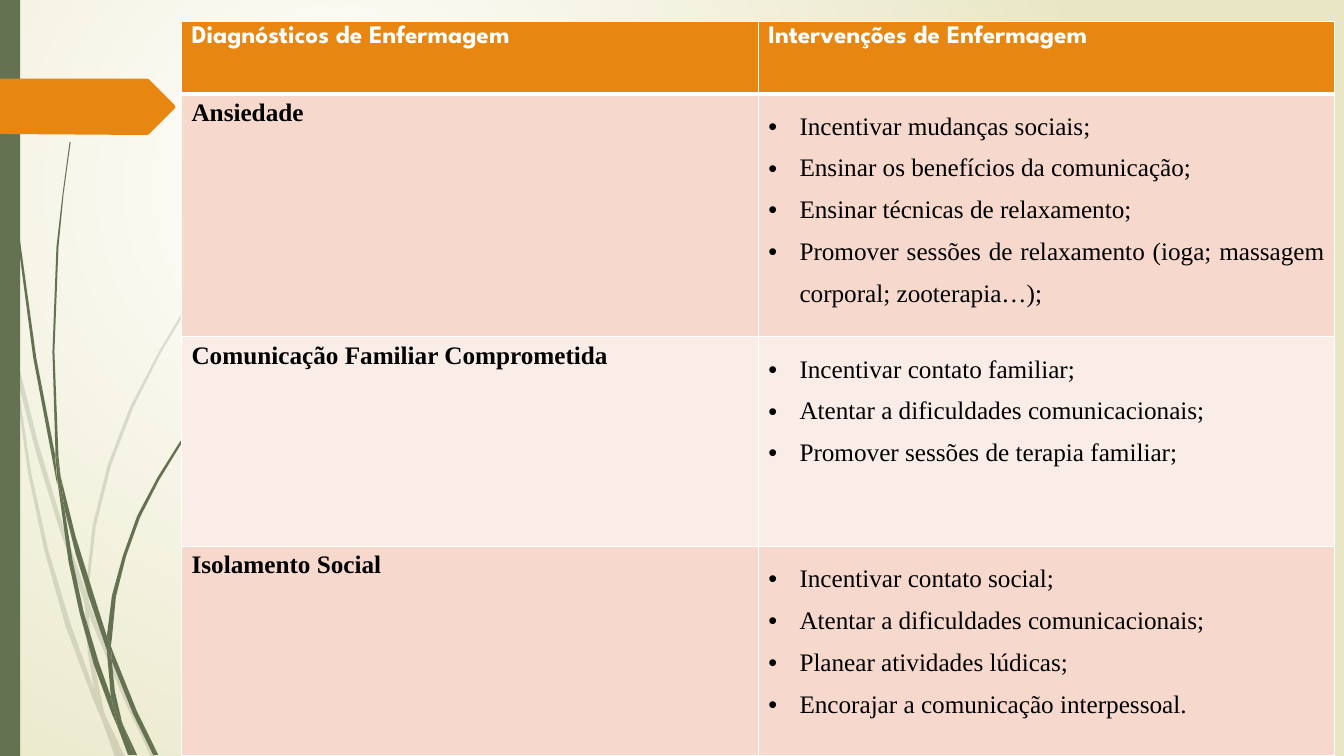
from lxml import etree
from pptx import Presentation
from pptx.dml.color import RGBColor
from pptx.enum.shapes import MSO_SHAPE as Shape
from pptx.enum.text import PP_ALIGN as Align
from pptx.oxml import parse_xml
from pptx.oxml.ns import nsdecls, qn
from pptx.util import Pt

PX = 9144  # 100 px to the inch

GREEN = RGBColor(0x64, 0x72, 0x52)
ORANGE = RGBColor(0xE7, 0x87, 0x12)
WHITE = RGBColor(0xFF, 0xFF, 0xFF)
BLACK = RGBColor(0x00, 0x00, 0x00)
CREAM = RGBColor(0xE8, 0xE6, 0xC4)
ROSE = RGBColor(0xF6, 0xD9, 0xCC)
PALE_ROSE = RGBColor(0xFA, 0xED, 0xE7)

# Outlines of the grass blades, in px
PALE_GRASS = [
    [(11, 350), (9, 322), (0, 282), (0, 299), (10, 344)],
    [(58, 522), (84, 599), (85, 586), (62, 520), (38, 440), (14, 345), (17, 376), (36, 450)],
    [(92, 607), (88, 596), (88, 610), (123, 694), (150, 751), (155, 751), (127, 692)],
    [(119, 751), (124, 751), (105, 711)],
    [(93, 683), (70, 619), (48, 546), (31, 469), (17, 376), (11, 350), (28, 470),
     (44, 546), (65, 621), (92, 693), (101, 714), (99, 707)],
    [(84, 599), (87, 646), (93, 683), (96, 692), (105, 711), (103, 706), (91, 646),
     (88, 610), (88, 608)],
    [(88, 584), (95, 522), (110, 462), (132, 405), (160, 349), (192, 296), (229, 245),
     (268, 198), (290, 175), (312, 154), (312, 153), (289, 175), (268, 197), (228, 244),
     (190, 295), (158, 348), (129, 404), (107, 461), (92, 521), (85, 584), (85, 586), (88, 596)],
    [(101, 714), (114, 751), (119, 751)],
    [(88, 608), (88, 610), (88, 596), (85, 586), (84, 599)],
    [(96, 692), (93, 683), (99, 707), (101, 714), (119, 751), (105, 711)],
]
DARK_GRASS = [
    [(7, 110), (17, 233), (33, 355), (56, 477), (57, 481), (55, 457), (55, 453), (36, 355),
     (19, 232), (8, 109), (5, 48), (4, 0), (3, 0), (4, 48)],
    [(88, 592), (106, 645), (106, 633), (106, 631), (93, 590), (75, 532), (60, 472),
     (64, 505), (75, 549)],
    [(113, 649), (110, 641), (111, 656), (132, 708), (152, 749), (157, 749), (136, 706)],
    [(110, 691), (98, 657), (83, 607), (72, 556), (64, 505), (57, 477), (68, 557), (79, 608),
     (93, 659), (111, 708), (117, 722), (116, 717)],
    [(60, 472), (58, 453), (54, 349), (58, 245), (63, 193), (70, 141), (69, 141), (62, 193),
     (56, 245), (52, 349), (55, 449)],
    [(133, 749), (136, 749), (122, 719)],
    [(57, 477), (64, 505), (60, 472), (55, 449), (55, 453)],
    [(111, 633), (115, 592), (125, 552), (139, 513), (158, 476), (180, 440), (205, 406),
     (231, 374), (245, 359), (261, 344), (260, 344), (245, 358), (231, 373), (204, 405),
     (178, 439), (156, 474), (136, 512), (122, 551), (111, 591), (106, 631), (110, 641)],
    [(117, 722), (127, 749), (131, 749)],
    [(106, 645), (110, 691), (116, 706), (122, 719), (121, 716), (114, 686), (111, 656), (109, 651)],
    [(106, 645), (109, 651), (111, 656), (110, 641), (106, 631), (106, 633)],
    [(116, 706), (110, 691), (116, 717), (117, 722), (130, 749), (133, 749), (122, 719)],
]
TAG = [(0, 78), (146, 78), (148, 79), (173, 104), (174, 106), (173, 108), (148, 133),
       (146, 134), (0, 133)]

HEADINGS = ["Diagnósticos de Enfermagem", "Intervenções de Enfermagem"]
CARE_PLAN = [
    ("Ansiedade", [
        "Incentivar mudanças sociais;",
        "Ensinar os benefícios da comunicação;",
        "Ensinar técnicas de relaxamento;",
        "Promover sessões de relaxamento (ioga; massagem corporal; zooterapia…);"]),
    ("Comunicação Familiar Comprometida", [
        "Incentivar contato familiar;",
        "Atentar a dificuldades comunicacionais;",
        "Promover sessões de terapia familiar;"]),
    ("Isolamento Social", [
        "Incentivar contato social;",
        "Atentar a dificuldades comunicacionais;",
        "Planear atividades lúdicas;",
        "Encorajar a comunicação interpessoal."]),
]
ROW_HEIGHTS = [72, 241, 208, 208]
COLUMN_WIDTH = 572


def paint_background(slide):
    fill = slide.background.fill
    fill.gradient()
    for stop, color in zip(fill.gradient_stops, (WHITE, CREAM)):
        stop.color.rgb = color
    linear = slide.element.find(".//" + qn("a:lin"))
    linear.getparent().replace(linear, parse_xml(
        f'<a:path {nsdecls("a")} path="circle">'
        '<a:fillToRect l="50000" t="50000" r="100000" b="100000"/></a:path>'))


def paint(shape, color, opacity=100):
    shape.shadow.inherit = False
    shape.fill.solid()
    shape.fill.fore_color.rgb = color
    shape.line.fill.background()
    if opacity < 100:
        rgb = shape.element.spPr.find(qn("a:solidFill"))[0]
        etree.SubElement(rgb, qn("a:alpha")).set("val", str(opacity * 1000))


def add_outline(shapes, points, color, opacity=100):
    builder = shapes.build_freeform(*points[0], scale=PX)
    builder.add_line_segments(points[1:], close=True)
    paint(builder.convert_to_shape(), color, opacity)


def add_grass(slide, blades, opacity):
    tuft = slide.shapes.add_group_shape()
    for blade in blades:
        add_outline(tuft.shapes, blade, GREEN, opacity)


def set_borders(cell, **widths):
    """Draw white borders of 1 pt, or of the width given for a side (L, R, T, B)."""
    for place, side in enumerate("LRTB"):
        cell._tc.get_or_add_tcPr().insert(place, parse_xml(
            f'<a:ln{side} {nsdecls("a")} w="{Pt(widths.get(side, 1))}">'
            f'<a:solidFill><a:srgbClr val="{WHITE}"/></a:solidFill></a:ln{side}>'))


def fill_cell(cell, lines, color, font_name, font_color, bold):
    cell.fill.solid()
    cell.fill.fore_color.rgb = color
    cell.text_frame.text = "\n".join(lines)
    for paragraph in cell.text_frame.paragraphs:
        font = paragraph.runs[0].font
        font.name, font.size, font.bold = font_name, Pt(18), bold
        font.color.rgb = font_color


def add_bullets(cell):
    for paragraph in cell.text_frame.paragraphs:
        paragraph.alignment = Align.JUSTIFY
        paragraph.line_spacing = 1.5
        properties = paragraph._p.get_or_add_pPr()
        properties.set("marL", str(31 * PX))
        properties.set("indent", str(-31 * PX))
        etree.SubElement(properties, qn("a:buFont")).set("typeface", "Arial")
        etree.SubElement(properties, qn("a:buChar")).set("char", "•")


def add_care_table(slide):
    table = slide.shapes.add_table(
        len(ROW_HEIGHTS), len(HEADINGS), 180 * PX, 21 * PX,
        len(HEADINGS) * COLUMN_WIDTH * PX, sum(ROW_HEIGHTS) * PX).table
    for column in table.columns:
        column.width = COLUMN_WIDTH * PX
    for row, height in zip(table.rows, ROW_HEIGHTS):
        row.height = height * PX

    for cell, heading in zip(table.rows[0].cells, HEADINGS):
        fill_cell(cell, [heading], ORANGE, "League Spartan", WHITE, True)
        set_borders(cell, B=3)

    for number, (diagnosis, interventions) in enumerate(CARE_PLAN, start=1):
        color = ROSE if number % 2 else PALE_ROSE
        left, right = table.rows[number].cells
        fill_cell(left, [diagnosis], color, "Times New Roman", BLACK, True)
        fill_cell(right, interventions, color, "Times New Roman", BLACK, False)
        add_bullets(right)
        for cell in (left, right):
            set_borders(cell, T=3 if number == 1 else 1)


def main():
    deck = Presentation()
    deck.slide_width, deck.slide_height = 1333 * PX, 750 * PX
    slide = deck.slides.add_slide(deck.slide_layouts[6])
    paint_background(slide)

    # Decoration on the left
    add_grass(slide, PALE_GRASS, 20)
    add_grass(slide, DARK_GRASS, 100)
    paint(slide.shapes.add_shape(Shape.RECTANGLE, 0, 0, 20 * PX, 750 * PX), GREEN)
    add_outline(slide.shapes, TAG, ORANGE)

    # Diagnoses and interventions
    add_care_table(slide)
    deck.save("out.pptx")


if __name__ == "__main__":
    main()
